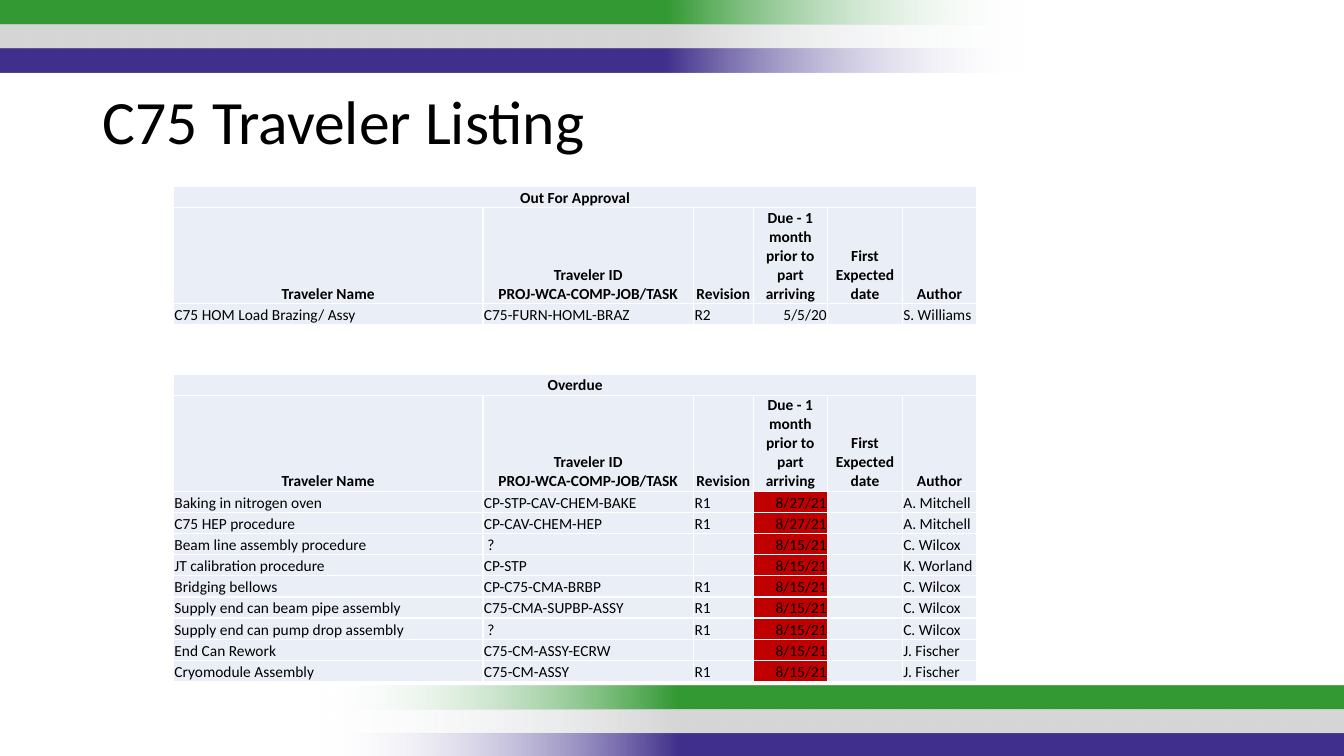
from lxml.etree import SubElement
from pptx import Presentation
from pptx.dml.color import RGBColor
from pptx.enum.shapes import MSO_SHAPE as Shape
from pptx.enum.text import MSO_ANCHOR as Anchor, MSO_AUTO_SIZE as AutoSize, PP_ALIGN as Align
from pptx.oxml import parse_xml
from pptx.oxml.ns import nsdecls, qn
from pptx.util import Inches, Pt

COLORS = {
    "green": "339933", "gray": "D6D6D6", "purple": "42318C", "fade": "F7FAFD",
    "cell": "EAEFF7", "late": "C00000", "border": "FFFFFF", "text": "000000",
}
FONT = "Calibri"
TITLE = "C75 Traveler Listing"
HEADERS = ["Traveler Name", "Traveler ID\vPROJ-WCA-COMP-JOB/TASK", "Revision",
           "Due - 1 month prior to part arriving", "First Expected date", "Author"]
APPROVAL = [
    ("C75 HOM Load Brazing/ Assy", "C75-FURN-HOML-BRAZ", "R2", "5/5/20", "", "S. Williams"),
]
OVERDUE = [
    ("Baking in nitrogen oven", "CP-STP-CAV-CHEM-BAKE", "R1", "8/27/21", "", "A. Mitchell"),
    ("C75 HEP procedure", "CP-CAV-CHEM-HEP", "R1", "8/27/21", "", "A. Mitchell"),
    ("Beam line assembly procedure", " ?", "", "8/15/21", "", "C. Wilcox"),
    ("JT calibration procedure", "CP-STP", "", "8/15/21", "", "K. Worland"),
    ("Bridging bellows", "CP-C75-CMA-BRBP", "R1", "8/15/21", "", "C. Wilcox"),
    ("Supply end can beam pipe assembly", "C75-CMA-SUPBP-ASSY", "R1", "8/15/21", "", "C. Wilcox"),
    ("Supply end can pump drop assembly", " ?", "R1", "8/15/21", "", "C. Wilcox"),
    ("End Can Rework", "C75-CM-ASSY-ECRW", "", "8/15/21", "", "J. Fischer"),
    ("Cryomodule Assembly", "C75-CM-ASSY", "R1", "8/15/21", "", "J. Fischer"),
]
# heading, rows, top, fill of the due dates
LISTINGS = [("Out For Approval", APPROVAL, 1.85, "cell"), ("Overdue", OVERDUE, 3.71, "late")]
COLUMN_WIDTHS = [3.07, 2.09, 0.59, 0.74, 0.74, 0.74]
TABLE_LEFT, ROW_HEIGHT, HEADER_HEIGHT = 1.72, 0.21, 0.95
DUE_COLUMN = 3
# left, top, rotation of each band of stripes
BANDS = [(-0.01, 0, 180), (3.17, 6.8, 0)]
STRIPE_WIDTH, STRIPE_HEIGHT = 10.17, 0.24


def rgb(name):
    return RGBColor.from_string(COLORS[name])


def add_stripe(slide, left, top, rotation, color):
    """Add a bar that fades out at the start of its gradient."""
    stripe = slide.shapes.add_shape(Shape.RECTANGLE, Inches(left), Inches(top),
                                    Inches(STRIPE_WIDTH), Inches(STRIPE_HEIGHT))
    stripe.rotation = rotation
    stripe.shadow.inherit = False
    stripe.line.fill.background()
    stops = "".join(f'<a:gs pos="{position}"><a:srgbClr val="{COLORS[color]}"/></a:gs>'
                    for position in (35000, 80000, 100000))
    gradient = parse_xml(
        f'<a:gradFill {nsdecls("a")} rotWithShape="1"><a:gsLst><a:gs pos="0">'
        f'<a:srgbClr val="{COLORS["fade"]}"><a:alpha val="0"/></a:srgbClr></a:gs>{stops}'
        '</a:gsLst><a:lin ang="0" scaled="1"/></a:gradFill>')
    stripe._element.spPr.find(qn("a:prstGeom")).addnext(gradient)


def add_borders(cell):
    properties = cell._tc.get_or_add_tcPr()
    for side in ("lnL", "lnR", "lnT", "lnB"):
        line = SubElement(properties, qn(f"a:{side}"), w=str(Pt(1)))
        fill = SubElement(line, qn("a:solidFill"))
        SubElement(fill, qn("a:srgbClr"), val=COLORS["border"])


def format_cell(cell, text, fill, align, bold):
    cell.text_frame.text = text
    cell.vertical_anchor = Anchor.BOTTOM
    cell.margin_left = cell.margin_right = cell.margin_top = Inches(0.01)
    cell.margin_bottom = 0
    add_borders(cell)
    cell.fill.solid()
    cell.fill.fore_color.rgb = rgb(fill)
    paragraph = cell.text_frame.paragraphs[0]
    paragraph.alignment = align
    for run in paragraph.runs:
        run.font.size, run.font.name, run.font.bold = Pt(11), FONT, bold
        run.font.color.rgb = rgb("text")
    if not text:  # keeps an empty cell from stretching its row
        SubElement(paragraph._p, qn("a:endParaRPr"), sz="1100")


def add_listing(slide, heading, travelers, top, due_fill):
    rows = [(heading, "", "", "", "", ""), HEADERS, *travelers]
    heights = [ROW_HEIGHT, HEADER_HEIGHT] + [ROW_HEIGHT] * len(travelers)
    table = slide.shapes.add_table(len(rows), len(HEADERS), Inches(TABLE_LEFT), Inches(top),
                                   Inches(sum(COLUMN_WIDTHS)), Inches(sum(heights))).table
    table.first_row = table.horz_banding = False
    for column, width in zip(table.columns, COLUMN_WIDTHS):
        column.width = Inches(width)
    for i, (values, height) in enumerate(zip(rows, heights)):
        table.rows[i].height = Inches(height)
        is_header = i < 2
        for j, text in enumerate(values):
            is_due = j == DUE_COLUMN and not is_header
            align = Align.CENTER if is_header else Align.RIGHT if is_due else Align.LEFT
            format_cell(table.cell(i, j), text, due_fill if is_due else "cell", align, is_header)
    table.cell(0, 0).merge(table.cell(0, len(HEADERS) - 1))


def add_title(slide):
    title = slide.shapes.title
    title.left, title.top, title.width, title.height = map(Inches, (0.92, 0.86, 11.5, 0.99))
    frame = title.text_frame
    frame.text = TITLE
    frame.auto_size = AutoSize.NONE
    frame.vertical_anchor = Anchor.TOP
    paragraph = frame.paragraphs[0]
    paragraph.alignment = Align.LEFT
    paragraph.line_spacing = 0.9
    font = paragraph.runs[0].font
    font.size, font.name = Pt(44), FONT
    font.color.rgb = rgb("text")


def main():
    presentation = Presentation()
    presentation.slide_width, presentation.slide_height = Inches(13.33), Inches(7.5)
    slide = presentation.slides.add_slide(presentation.slide_layouts[5])
    for left, top, rotation in BANDS:
        for i, color in enumerate(("green", "gray", "purple")):
            add_stripe(slide, left, top + i * STRIPE_HEIGHT, rotation, color)
    add_title(slide)
    for listing in LISTINGS:
        add_listing(slide, *listing)
    presentation.save("out.pptx")


if __name__ == "__main__":
    main()
